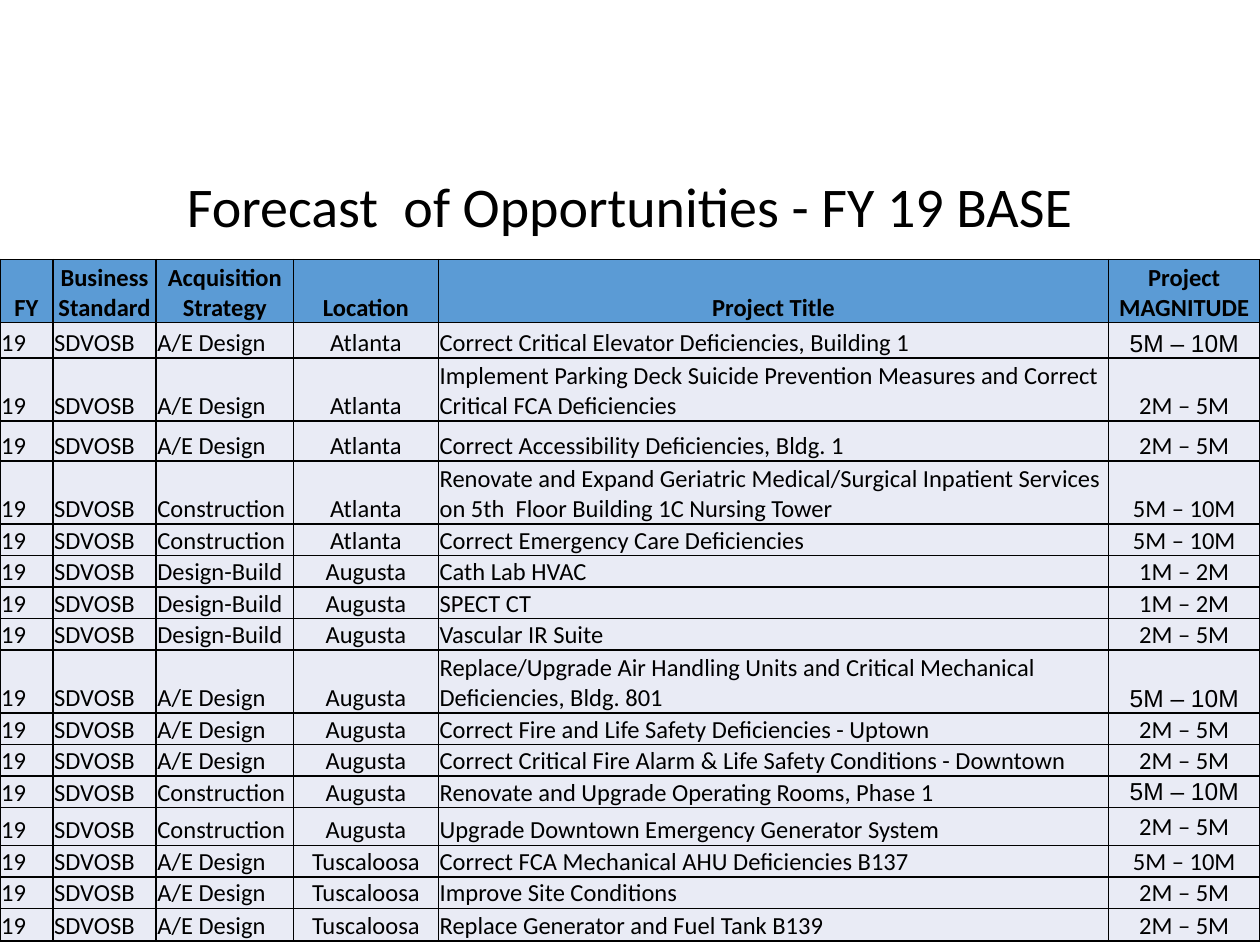
"""Build the FY 19 forecast of opportunities slide."""
from lxml.etree import SubElement
from pptx import Presentation
from pptx.dml.color import RGBColor
from pptx.enum.text import MSO_ANCHOR as Anchor, PP_ALIGN as Align
from pptx.oxml.ns import qn
from pptx.util import Inches, Pt

TITLE = "Forecast  of Opportunities - FY 19 BASE"
FISCAL_YEAR, STANDARD = "19", "SDVOSB"
COLUMNS = [
    ("FY", 0.42, Align.LEFT),
    ("Business Standard", 0.82, Align.LEFT),
    ("Acquisition Strategy", 1.09, Align.LEFT),
    ("Location", 1.15, Align.CENTER),
    ("Project Title", 5.32, Align.LEFT),
    ("Project MAGNITUDE", 1.2, Align.CENTER),
]
PROJECTS = [
    ("A/E Design", "Atlanta", "Correct Critical Elevator Deficiencies, Building 1", "5M – 10M"),
    ("A/E Design", "Atlanta", "Implement Parking Deck Suicide Prevention Measures and Correct "
     "Critical FCA Deficiencies", "2M – 5M"),
    ("A/E Design", "Atlanta", "Correct Accessibility Deficiencies, Bldg. 1", "2M – 5M"),
    ("Construction", "Atlanta", "Renovate and Expand Geriatric Medical/Surgical Inpatient Services "
     "on 5th  Floor Building 1C Nursing Tower", "5M – 10M"),
    ("Construction", "Atlanta", "Correct Emergency Care Deficiencies", "5M – 10M"),
    ("Design-Build", "Augusta", "Cath Lab HVAC", "1M – 2M"),
    ("Design-Build", "Augusta", "SPECT CT", "1M – 2M"),
    ("Design-Build", "Augusta", "Vascular IR Suite", "2M – 5M"),
    ("A/E Design", "Augusta", "Replace/Upgrade Air Handling Units and Critical Mechanical "
     "Deficiencies, Bldg. 801", "5M – 10M"),
    ("A/E Design", "Augusta", "Correct Fire and Life Safety Deficiencies - Uptown", "2M – 5M"),
    ("A/E Design", "Augusta", "Correct Critical Fire Alarm & Life Safety Conditions - Downtown",
     "2M – 5M"),
    ("Construction", "Augusta", "Renovate and Upgrade Operating Rooms, Phase 1", "5M – 10M"),
    ("Construction", "Augusta", "Upgrade Downtown Emergency Generator System", "2M – 5M"),
    ("A/E Design", "Tuscaloosa", "Correct FCA Mechanical AHU Deficiencies B137", "5M – 10M"),
    ("A/E Design", "Tuscaloosa", "Improve Site Conditions", "2M – 5M"),
    ("A/E Design", "Tuscaloosa", "Replace Generator and Fuel Tank B139", "2M – 5M"),
]
TALL_ROWS = {0: 0.5, 1: 0.28, 2: 0.5, 3: 0.32, 4: 0.5, 9: 0.5, 13: 0.3, 16: 0.26}
ROW_HEIGHT = 0.25
ARIAL_MAGNITUDES = {1, 9, 12}
MIDDLE_MAGNITUDES = {12, 13, 14, 15}
THEME = {
    "font": "Calibri", "alt_font": "Arial", "title_size": 32, "table_size": 14,
    "text": "000000", "border": "000000", "header": "5B9BD5", "body": "E9EBF5",
}


def style_font(paragraph, size, name=THEME["font"], bold=False):
    font = paragraph.font
    font.name, font.size, font.bold = name, Pt(size), bold
    font.color.rgb = RGBColor.from_string(THEME["text"])


def add_borders(cell):
    properties = cell._tc.get_or_add_tcPr()
    for side in ("lnL", "lnR", "lnT", "lnB"):
        line = SubElement(properties, qn(f"a:{side}"), w=str(Pt(1)))
        SubElement(SubElement(line, qn("a:solidFill")), qn("a:srgbClr"), val=THEME["border"])


def fill_cell(cell, text, align, anchor, font, header):
    cell.margin_left = cell.margin_right = cell.margin_top = Inches(0.01)
    cell.margin_bottom = 0
    cell.vertical_anchor = anchor
    add_borders(cell)
    cell.fill.solid()
    cell.fill.fore_color.rgb = RGBColor.from_string(THEME["header" if header else "body"])
    cell.text = text
    paragraph = cell.text_frame.paragraphs[0]
    paragraph.alignment = align
    style_font(paragraph, THEME["table_size"], font, header)


def add_title(slide):
    title = slide.shapes.title
    title.left, title.top, title.width, title.height = map(Inches, (0, 1.34, 10, 0.58))
    title.text = TITLE
    title.text_frame.vertical_anchor = Anchor.MIDDLE
    heading = title.text_frame.paragraphs[0]
    heading.alignment = Align.CENTER
    style_font(heading, THEME["title_size"])


def add_forecast(slide):
    rows = [[name for name, _, _ in COLUMNS]]
    rows += [(FISCAL_YEAR, STANDARD, *project) for project in PROJECTS]
    heights = [TALL_ROWS.get(r, ROW_HEIGHT) for r in range(len(rows))]
    forecast = slide.shapes.add_table(len(rows), len(COLUMNS), 0, Inches(2.06),
                                      Inches(10), Inches(sum(heights))).table
    forecast.first_row = forecast.horz_banding = False
    for column, (_, width, _) in zip(forecast.columns, COLUMNS):
        column.width = Inches(width)
    for r, (values, height) in enumerate(zip(rows, heights)):
        forecast.rows[r].height = Inches(height)
        for c, (text, (_, _, align)) in enumerate(zip(values, COLUMNS)):
            magnitude = c == len(COLUMNS) - 1
            fill_cell(
                forecast.cell(r, c), text,
                Align.CENTER if r == 0 else align,
                Anchor.MIDDLE if magnitude and r in MIDDLE_MAGNITUDES else Anchor.BOTTOM,
                THEME["alt_font" if magnitude and r in ARIAL_MAGNITUDES else "font"],
                r == 0,
            )


def main():
    deck = Presentation()
    deck.slide_width, deck.slide_height = Inches(10), Inches(7.5)
    slide = deck.slides.add_slide(deck.slide_layouts[5])
    add_title(slide)
    add_forecast(slide)
    deck.save("out.pptx")


if __name__ == "__main__":
    main()
